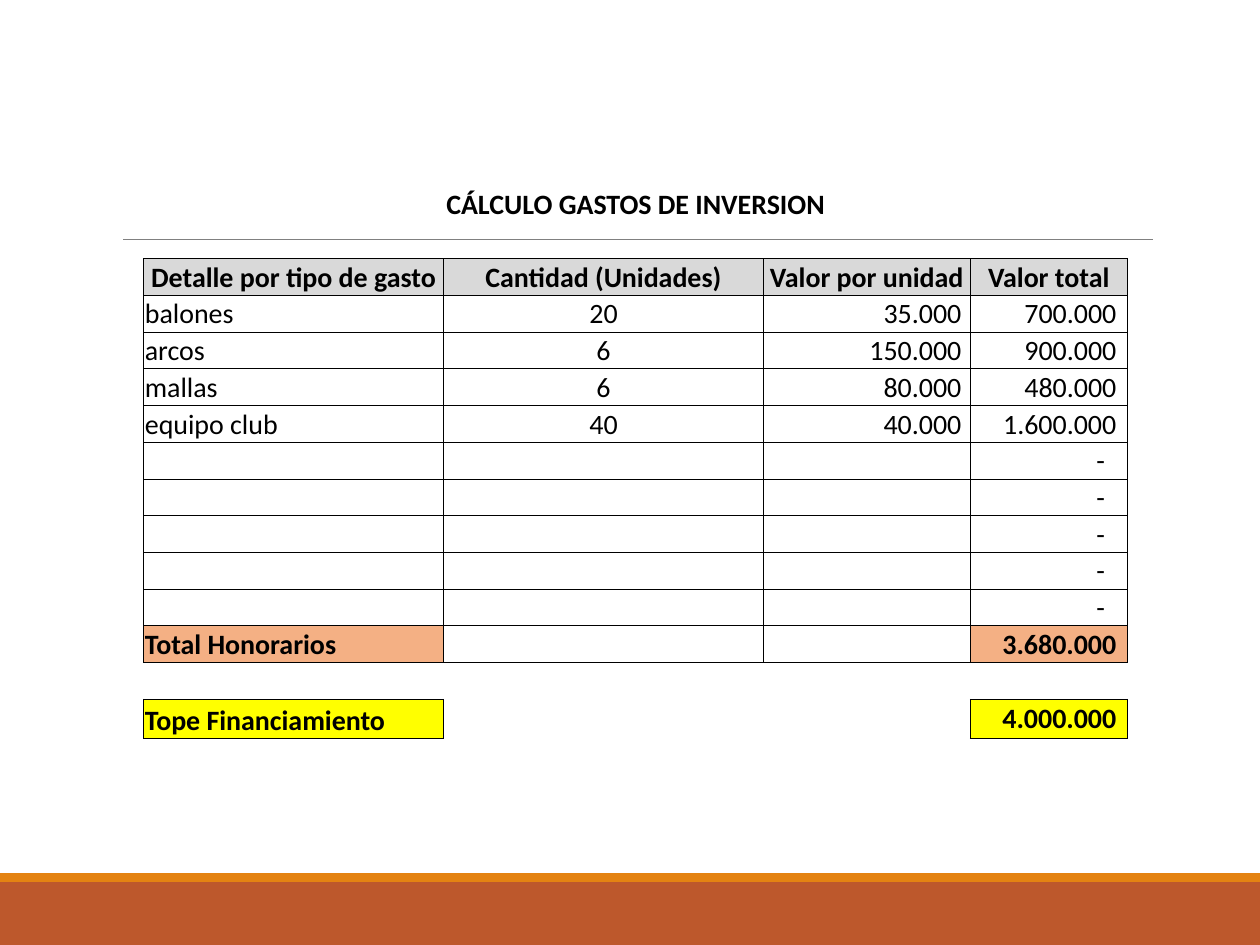
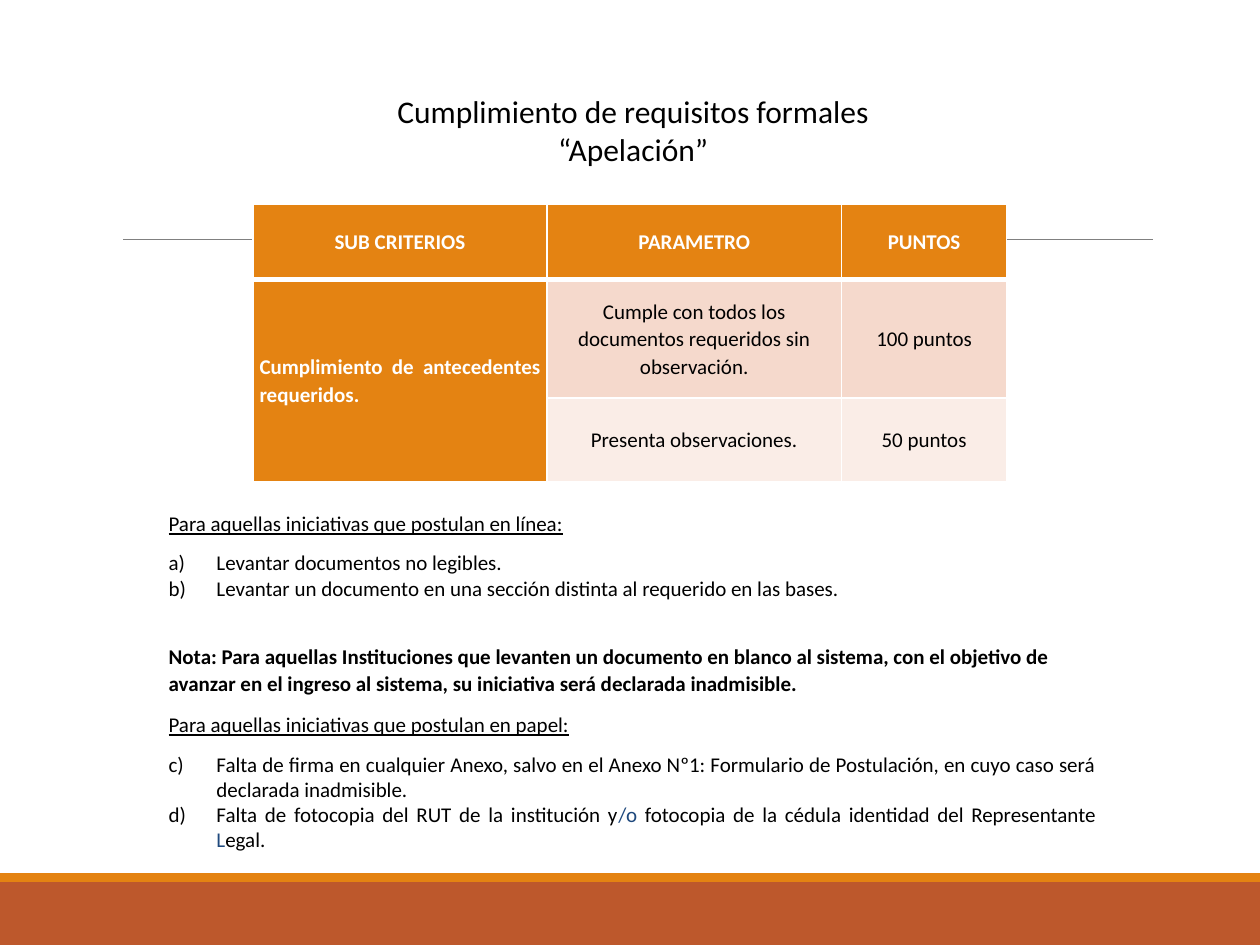
from lxml.etree import SubElement
from pptx import Presentation
from pptx.dml.color import RGBColor
from pptx.enum.shapes import MSO_CONNECTOR, MSO_SHAPE
from pptx.enum.text import MSO_ANCHOR as ANCHOR, MSO_AUTO_SIZE as AUTO_SIZE, PP_ALIGN as ALIGN
from pptx.oxml.ns import qn
from pptx.util import Inches, Pt

FONT = "Calibri"
COLORS = {
    "black": "000000", "white": "FFFFFF", "rule": "808080",
    "band": "BD582C", "orange": "E48312", "header": "D9D9D9",
    "total": "F4B084", "limit": "FFFF00", "blue": "1F497D",
    "stripe_dark": "F5D9CC", "stripe_light": "FAEDE7",
}

EXPENSES = [
    ("balones", "20", "35.000", "700.000"),
    ("arcos", "6", "150.000", "900.000"),
    ("mallas", "6", "80.000", "480.000"),
    ("equipo club", "40", "40.000", "1.600.000"),
]
EXPENSE_ROWS = (
    [("CÁLCULO GASTOS DE INVERSION", "", "", ""), ("",) * 4]
    + [("Detalle por tipo de gasto", "Cantidad (Unidades)", "Valor por unidad", "Valor total")]
    + EXPENSES
    + [("", "", "", "-")] * 5
    + [("Total Honorarios", "", "", "3.680.000"), ("",) * 4]
    + [("Tope Financiamiento", "", "", "4.000.000")]
)
HEADER_ROW, TOTAL_ROW, LIMIT_ROW = 2, 12, 14

CRITERIA_ROWS = [
    ("SUB CRITERIOS", "PARAMETRO", "PUNTOS"),
    ("Cumplimiento de antecedentes requeridos.",
     "Cumple con todos los documentos requeridos sin observación.", "100 puntos"),
    ("", "Presenta observaciones.", "50 puntos"),
]

# Each requirement is a kind and its runs; each run is a text and a colour.
REQUIREMENTS = [
    ("heading", [("Para aquellas iniciativas que postulan en línea:", "black")]),
    ("item", [("Levantar documentos no legibles.", "black")]),
    ("item", [("Levantar un documento en una sección distinta al requerido en las bases.", "black")]),
    ("note", [("Nota: Para aquellas Instituciones que levanten un documento en blanco al sistema, "
               "con el objetivo de avanzar en el ingreso al sistema, su iniciativa será declarada "
               "inadmisible.", "black")]),
    ("heading", [("Para aquellas iniciativas que postulan en papel:", "black")]),
    ("item", [("Falta de firma en cualquier Anexo, salvo en el Anexo Nº1: Formulario de Postulación, "
               "en cuyo caso será declarada inadmisible.", "black")]),
    ("item", [("Falta de fotocopia del RUT de la institución y", "black"), ("/o ", "blue"),
              ("fotocopia de la cédula identidad del Representante ", "black"),
              ("L", "blue"), ("egal.", "black")]),
]


def rgb(name):
    return RGBColor.from_string(COLORS[name])


def format_run(run, size, color="black", bold=False, underline=False):
    font = run.font
    font.name, font.size = FONT, Pt(size)
    font.bold, font.underline = bold, underline
    font.color.rgb = rgb(color)


def add_frame(slide):
    """Draw the footer bands and the title rule shared by the slides."""
    for top, height, color in ((7, 0.5, "band"), (6.93, 0.07, "orange")):
        band = slide.shapes.add_shape(
            MSO_SHAPE.RECTANGLE, 0, Inches(top), Inches(10), Inches(height))
        band.shadow.inherit = False
        band.fill.solid()
        band.fill.fore_color.rgb = rgb(color)
        band.line.fill.background()
    rule = slide.shapes.add_connector(
        MSO_CONNECTOR.STRAIGHT, Inches(0.98), Inches(1.9), Inches(9.15), Inches(1.9))
    rule.line.color.rgb = rgb("rule")
    rule.line.width = Pt(0.5)
    SubElement(rule._element.spPr, qn("a:effectLst"))


def add_plain_table(slide, left, top, widths, heights):
    """Add a table without style bands; heights are lengths, widths are inches."""
    shape = slide.shapes.add_table(
        len(heights), len(widths), Inches(left), Inches(top), Inches(sum(widths)), sum(heights))
    table = shape.table
    table.first_row = table.horz_banding = False
    for column, width in zip(table.columns, widths):
        column.width = Inches(width)
    for row, height in zip(table.rows, heights):
        row.height = height
    return table


def set_borders(cell, color, left, right, top, bottom):
    """Set the border widths in points; a zero hides that side."""
    properties = cell._tc.get_or_add_tcPr()
    for side, width in zip("LRTB", (left, right, top, bottom)):
        line = SubElement(properties, qn(f"a:ln{side}"), w=str(Pt(width)))
        if width:
            fill = SubElement(line, qn("a:solidFill"))
            SubElement(fill, qn("a:srgbClr"), val=COLORS[color])
        else:
            SubElement(line, qn("a:noFill"))


def fill_cell(cell, color):
    if color:
        cell.fill.solid()
        cell.fill.fore_color.rgb = rgb(color)
    else:
        cell.fill.background()


def write_cell(cell, text, size, align, margins, **style):
    """Write one paragraph; margins are left, top, right and bottom in inches."""
    cell.vertical_anchor = ANCHOR.MIDDLE
    (cell.margin_left, cell.margin_top,
     cell.margin_right, cell.margin_bottom) = map(Inches, margins)
    paragraph = cell.text_frame.paragraphs[0]
    paragraph.text = text
    paragraph.alignment = align
    for run in paragraph.runs:
        format_run(run, size, **style)
    if not text:
        SubElement(paragraph._p, qn("a:endParaRPr"), sz=str(size * 100))
    return paragraph


def is_boxed(row, column):
    in_grid = HEADER_ROW <= row <= TOTAL_ROW and 0 <= column <= 3
    return in_grid or (row == LIMIT_ROW and column in (0, 3))


def expense_fill(row, column):
    if row == HEADER_ROW:
        return "header"
    if column in (0, 3):
        return {TOTAL_ROW: "total", LIMIT_ROW: "limit"}.get(row)
    return None


def expense_layout(row, column, text):
    """Return the alignment and the right margin of a cell."""
    if row <= HEADER_ROW or column == 1:
        return ALIGN.CENTER, 0.01
    if column == 0:
        return ALIGN.LEFT, 0.01
    if text == "-":
        return ALIGN.RIGHT, 0.18
    return ALIGN.RIGHT, 0.07 if column == 2 else 0.09


def add_expense_table(slide, left, top):
    row_height = int(Inches(3.5) / 12)
    heights = [row_height] * LIMIT_ROW + [Inches(0.31)]
    table = add_plain_table(slide, left, top, (2.38, 2.54, 1.64, 1.25), heights)
    for r, texts in enumerate(EXPENSE_ROWS):
        for c, text in enumerate(texts):
            cell = table.cell(r, c)
            neighbours = ((r, c - 1), (r, c + 1), (r - 1, c), (r + 1, c))
            set_borders(cell, "black", *(
                0.5 if is_boxed(r, c) or is_boxed(*place) else 0 for place in neighbours))
            fill_cell(cell, expense_fill(r, c))
            align, right = expense_layout(r, c, text)
            write_cell(cell, text, 16, align, (0.01, 0.01, right, 0),
                       bold=r <= HEADER_ROW or r >= TOTAL_ROW)
    title = table.cell(0, 0)
    title.merge(table.cell(0, 3))
    for cell in (title, table.cell(LIMIT_ROW, 0)):
        cell.vertical_anchor = ANCHOR.BOTTOM


def add_title(slide, left, top, width, height):
    box = slide.shapes.add_textbox(Inches(left), Inches(top), Inches(width), Inches(height))
    frame = box.text_frame
    frame.word_wrap = False
    frame.auto_size = AUTO_SIZE.SHAPE_TO_FIT_TEXT
    frame.text = "Cumplimiento de requisitos formales\n“Apelación”"
    for paragraph in frame.paragraphs:
        paragraph.alignment = ALIGN.CENTER
        format_run(paragraph.runs[0], 18)


def add_criteria_table(slide, left, top):
    heights = [Inches(height) for height in (0.6, 0.94, 0.66)]
    table = add_plain_table(slide, left, top, (2.33, 2.34, 1.31), heights)
    stripes = ("orange", "stripe_dark", "stripe_light")
    for r, texts in enumerate(CRITERIA_ROWS):
        for c, text in enumerate(texts):
            cell = table.cell(r, c)
            is_heading = r == 0 or c == 0
            set_borders(cell, "white", 1, 1, 3 if r == 1 else 1, 3 if r == 0 else 1)
            fill_cell(cell, "orange" if is_heading else stripes[r])
            align = ALIGN.JUSTIFY if r and c == 0 else ALIGN.CENTER
            side = 0.01 if (r, c) == (0, 2) else 0.05
            paragraph = write_cell(cell, text, 12, align, (side, 0, side, 0),
                                   color="white" if is_heading else "black", bold=is_heading)
            paragraph.line_spacing = 1.07
            if not is_heading:
                paragraph.space_after = Pt(8)
    table.cell(1, 0).merge(table.cell(2, 0))


def number_paragraph(paragraph, number):
    properties = paragraph._p.get_or_add_pPr()
    properties.set("marL", str(Inches(0.38)))
    properties.set("indent", str(-Inches(0.38)))
    SubElement(properties, qn("a:buFont"), typeface="+mj-lt")
    SubElement(properties, qn("a:buAutoNum"), type="alphaLcParenR", startAt=str(number))


def add_requirements(slide, left, top, width, height):
    box = slide.shapes.add_textbox(Inches(left), Inches(top), Inches(width), Inches(height))
    frame = box.text_frame
    frame.word_wrap = True
    frame.auto_size = AUTO_SIZE.SHAPE_TO_FIT_TEXT
    items = 0
    first_in_list = 1
    for index, (kind, runs) in enumerate(REQUIREMENTS):
        paragraph = frame.add_paragraph() if index else frame.paragraphs[0]
        paragraph.alignment = ALIGN.LEFT if kind == "note" else ALIGN.JUSTIFY
        if kind == "item":
            items += 1
            number_paragraph(paragraph, first_in_list)
        else:
            first_in_list = items + 1
            paragraph.line_spacing = 1.07
            paragraph.space_after = Pt(8)
        if kind == "note":
            paragraph.space_before = Pt(24)
        for text, color in runs:
            run = paragraph.add_run()
            run.text = text
            format_run(run, 12, color, bold=kind == "note", underline=kind == "heading")


def build_expense_slide(slide):
    add_frame(slide)
    add_expense_table(slide, 1.14, 1.47)


def build_requirements_slide(slide):
    add_frame(slide)
    add_title(slide, 3.03, 0.68, 3.99, 0.71)
    add_criteria_table(slide, 2.01, 1.62)
    add_requirements(slide, 1.24, 3.99, 7.56, 2.64)


def main():
    presentation = Presentation()
    presentation.slide_width, presentation.slide_height = Inches(10), Inches(7.5)
    blank = presentation.slide_layouts[6]
    for build in (build_expense_slide, build_requirements_slide):
        build(presentation.slides.add_slide(blank))
    presentation.save("out.pptx")


if __name__ == "__main__":
    main()
